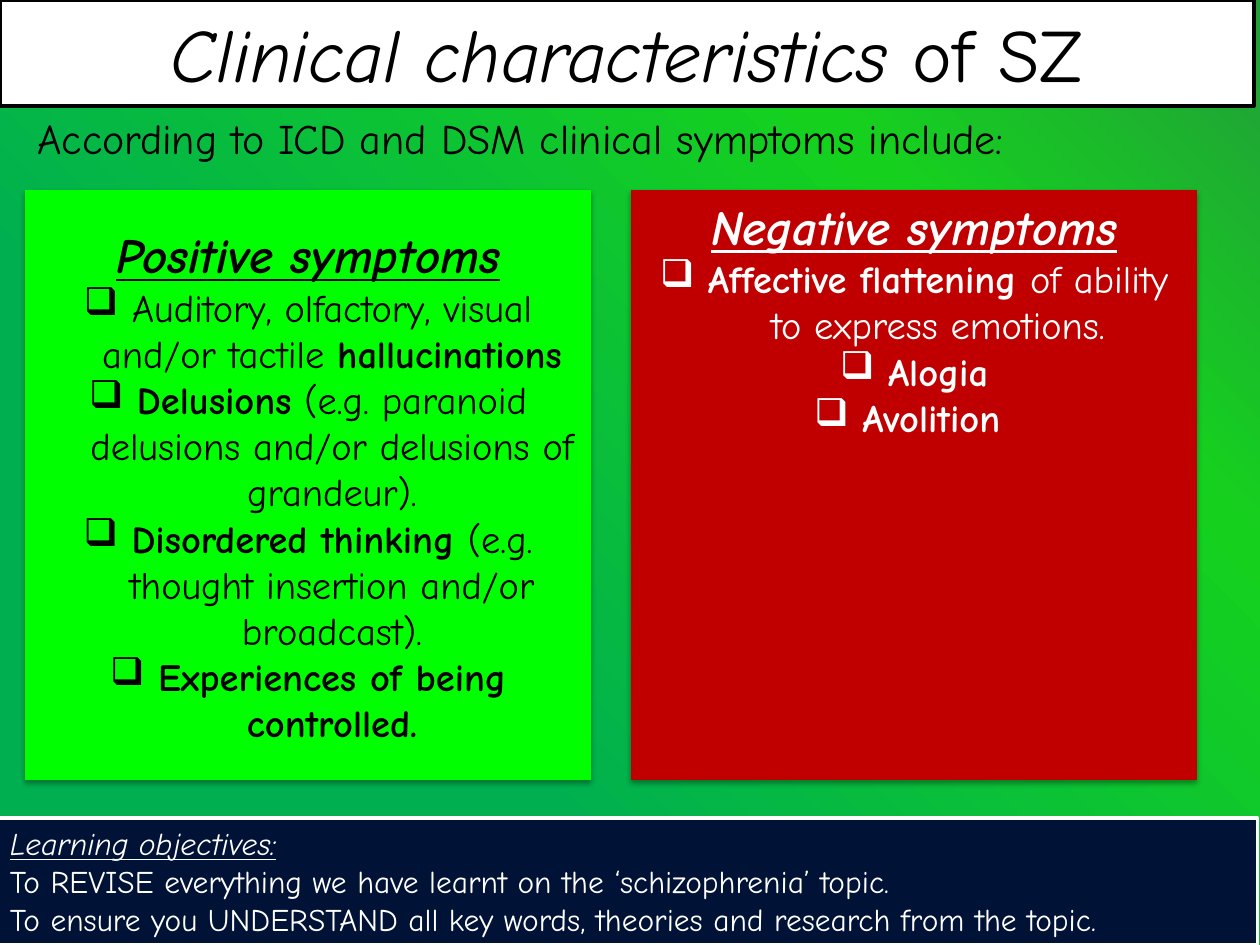
from copy import deepcopy
from dataclasses import dataclass

from lxml import etree
from pptx import Presentation
from pptx.dml.color import RGBColor
from pptx.enum import shapes, text
from pptx.oxml.ns import qn
from pptx.util import Inches, Pt

HUES = {
    "black": "000000", "white": "FFFFFF", "lime": "00FF00", "red": "C00000",
    "navy": "001236", "green": "00B050", "leaf": "15D11E", "moss": "229E3A",
}
STOPS = [(0, "green"), (0.31, "green"), (0.75, "leaf"), (1, "moss")]
FONT = "Comic Neue"


@dataclass
class Run:
    words: str
    size: float
    bold: bool = False
    slant: bool = False
    under: bool = False


@dataclass
class Para:
    runs: list[Run]
    bullet: bool = False


@dataclass
class Box:
    left: float
    top: float
    width: float
    height: float
    paras: list[Para]
    ink: str = "black"
    fill: str | None = None
    line: str | None = None
    weight: float = 0
    shadow: bool = False
    mid: bool = False
    center: bool = False
    grow: bool = False


def plain(words: str) -> Run:
    return Run(words, 22)


def bold(words: str) -> Run:
    return Run(words, 22, bold=True)


def item(*runs: Run) -> Para:
    return Para(list(runs), bullet=True)


def head(words: str) -> Para:
    return Para([Run(words, 28, True, True, True)])


def shade(shape) -> None:
    glow = etree.SubElement(
        shape.element.spPr.find(qn("a:effectLst")), qn("a:outerShdw"),
        blurRad=str(Pt(3.1)), dist=str(Pt(1.8)), dir="5400000", rotWithShape="0")
    hue = etree.SubElement(glow, qn("a:srgbClr"), val=HUES["black"])
    etree.SubElement(hue, qn("a:alpha"), val="35000")


def write(frame, box: Box) -> None:
    for spot, para in enumerate(box.paras):
        line = frame.paragraphs[0] if spot == 0 else frame.add_paragraph()
        line.alignment = text.PP_ALIGN.CENTER if box.center else text.PP_ALIGN.LEFT
        if para.bullet:
            props = line._p.get_or_add_pPr()
            props.set("marL", str(Inches(0.38)))
            props.set("indent", str(Inches(-0.38)))
            etree.SubElement(props, qn("a:buChar"), char="❑")
        for part in para.runs:
            run = line.add_run()
            run.text = part.words
            font = run.font
            font.name, font.size = FONT, Pt(part.size)
            font.bold, font.italic, font.underline = part.bold, part.slant, part.under
            font.color.rgb = RGBColor.from_string(HUES[box.ink])


def draw(page, box: Box) -> None:
    place = [Inches(n) for n in (box.left, box.top, box.width, box.height)]
    if box.fill:
        shape = page.shapes.add_shape(shapes.MSO_SHAPE.RECTANGLE, *place)
        shape.shadow.inherit = False
        shape.fill.solid()
        shape.fill.fore_color.rgb = RGBColor.from_string(HUES[box.fill])
        if box.line:
            shape.line.color.rgb = RGBColor.from_string(HUES[box.line])
            shape.line.width = Pt(box.weight)
        else:
            shape.line.fill.background()
        if box.shadow:
            shade(shape)
    else:
        shape = page.shapes.add_textbox(*place)
    frame = shape.text_frame
    frame.word_wrap = True
    frame.vertical_anchor = text.MSO_ANCHOR.MIDDLE if box.mid else text.MSO_ANCHOR.TOP
    if box.grow:
        frame.auto_size = text.MSO_AUTO_SIZE.SHAPE_TO_FIT_TEXT
    write(frame, box)


def paint(page) -> None:
    fill = page.background.fill
    fill.gradient()
    fill.gradient_angle = 45
    row = page.element.xpath(".//p:bg//a:gsLst")[0]
    while len(row) < len(STOPS):
        row.append(deepcopy(row[0]))
    for stop, (pos, hue) in zip(fill.gradient_stops, STOPS):
        stop.position = pos
        stop.color.rgb = RGBColor.from_string(HUES[hue])


def panel(left: float, fill: str, ink: str, mid: bool, paras: list[Para]) -> Box:
    return Box(left, 1.51, 4.49, 4.68, paras, ink, fill,
               shadow=True, mid=mid, center=True)


GOOD = [
    head("Positive symptoms"),
    item(plain("Auditory, olfactory, visual and/or tactile "), bold("hallucinations")),
    item(bold("Delusions"),
         plain(" (e.g. paranoid delusions and/or delusions of grandeur).")),
    item(bold("Disordered thinking "),
         plain("(e.g. thought insertion and/or broadcast).")),
    item(bold("Experiences of being controlled.")),
]
BAD = [
    head("Negative symptoms"),
    item(bold("Affective flattening "), plain("of ability to express emotions.")),
    item(bold("Alogia")),
    item(bold("Avolition ")),
]
GOALS = [
    Para([Run("Learning objectives:", 18, slant=True, under=True)]),
    Para([Run("To REVISE everything we have learnt on the ‘schizophrenia’ topic.", 18)]),
    Para([Run("To ensure you UNDERSTAND all key words, theories and research "
              "from the topic.", 18)]),
]
TITLE = [Para([Run("Clinical characteristics ", 42.9, slant=True), Run("of SZ", 42.9)])]
INTRO = [Para([Run("According to ICD and DSM clinical symptoms include:", 24)])]
BOXES = [
    Box(0, 0, 9.95, 0.84, TITLE, fill="white", line="black", weight=2.25,
        mid=True, center=True),
    panel(0.2, "lime", "black", True, GOOD),
    Box(0.2, 0.84, 9.53, 0.5, INTRO, grow=True),
    Box(-0.02, 6.49, 10, 1.01, GOALS, "white", "navy", "white", 2, grow=True),
    panel(5.01, "red", "white", False, BAD),
]


def main() -> None:
    """Build the slide on the clinical characteristics of SZ."""
    deck = Presentation()
    deck.slide_width, deck.slide_height = Inches(10), Inches(7.5)
    page = deck.slides.add_slide(deck.slide_layouts[6])
    paint(page)
    for box in BOXES:
        draw(page, box)
    deck.save("out.pptx")


if __name__ == "__main__":
    main()
